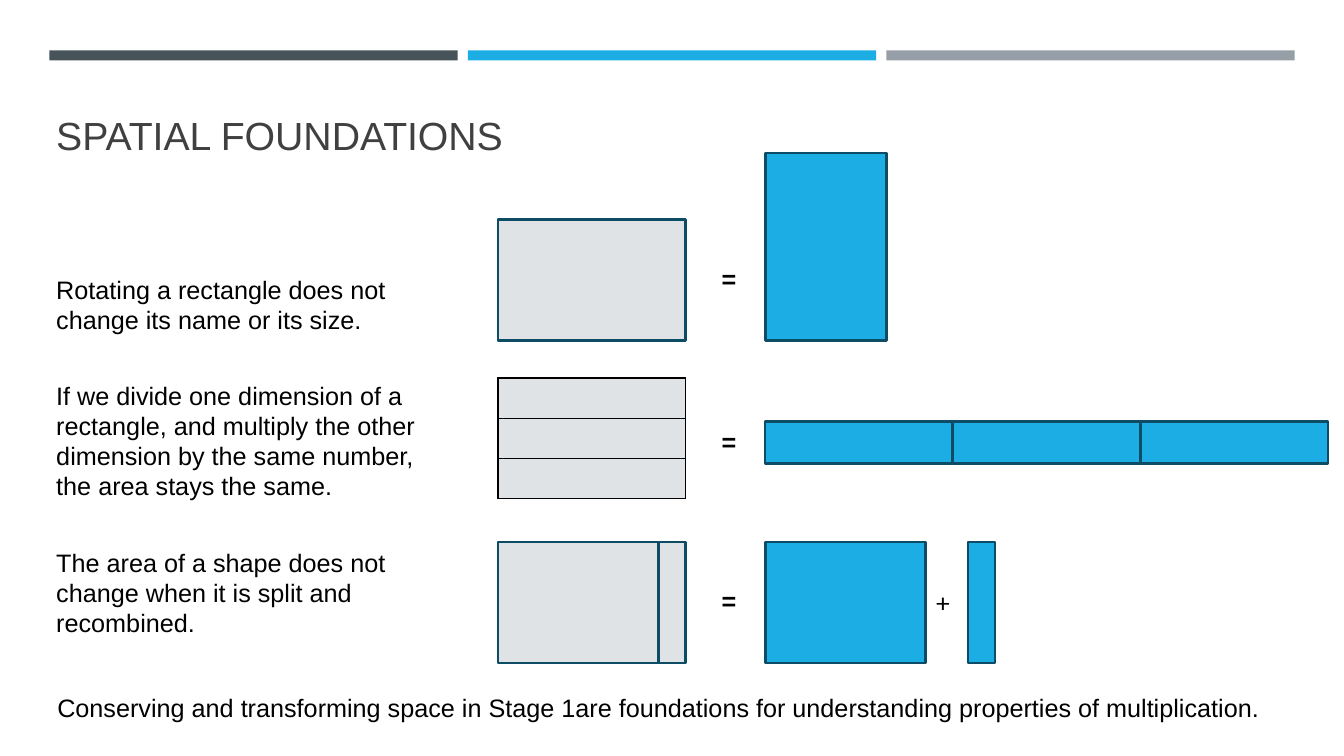
import pptx
import pptx.dml.color
import pptx.enum.shapes
import pptx.enum.text
import pptx.oxml
import pptx.oxml.ns
import pptx.util
from pptx.util import Inches

COLOURS = {
    "slate": "465359",
    "blue": "1CADE4",
    "grey": "969FA7",
    "pale": "DFE3E5",
    "outline": "0C4C64",
    "title": "404040",
    "black": "000000",
}

# Shared measures, in inches
TEXT_LEFT, TEXT_WIDTH = 0.46, 4.1
LEFT_COLUMN, RIGHT_COLUMN = 4.94, 7.59
LONG_SIDE, SHORT_SIDE = 1.86, 1.2
SPLIT_WIDE, SPLIT_NARROW = 1.59, 0.27
SPLIT_TOP = 5.38
STRIP_HEIGHT = 0.42
PARTS = 3


def colour(name):
    return pptx.dml.color.RGBColor.from_string(COLOURS[name])


def add_text(page, text, left, top, width, height, size=18, font="Arial",
             fill="black", bold=False, anchor="TOP", bottom=0.05):
    box = page.shapes.add_textbox(Inches(left), Inches(top), Inches(width), Inches(height))
    frame = box.text_frame
    frame.word_wrap = True
    frame.vertical_anchor = getattr(pptx.enum.text.MSO_ANCHOR, anchor)
    frame.margin_bottom = Inches(bottom)
    span = frame.paragraphs[0].add_run()
    span.text = text
    span.font.name = font
    span.font.size = pptx.util.Pt(size)
    span.font.bold = bold
    span.font.color.rgb = colour(fill)


def add_rectangle(page, left, top, width, height, fill, outlined=True, rotation=0):
    shape = page.shapes.add_shape(pptx.enum.shapes.MSO_SHAPE.RECTANGLE, Inches(left),
                                  Inches(top), Inches(width), Inches(height))
    shape.shadow.inherit = False
    shape.rotation = rotation
    shape.fill.solid()
    shape.fill.fore_color.rgb = colour(fill)
    if outlined:
        shape.line.color.rgb = colour("outline")
        shape.line.width = pptx.util.Pt(1.75)
    else:
        shape.line.fill.background()


def add_cell_borders(cell):
    properties = cell._tc.get_or_add_tcPr()
    for position, side in enumerate(("lnL", "lnR", "lnT", "lnB")):
        border = pptx.oxml.parse_xml(
            f'<a:{side} {pptx.oxml.ns.nsdecls("a")} w="12700"><a:solidFill>'
            f'<a:srgbClr val="{COLOURS["black"]}"/></a:solidFill></a:{side}>')
        properties.insert(position, border)


def add_divided_rectangle(page, left, top, width, height, rows):
    frame = page.shapes.add_table(rows, 1, Inches(left), Inches(top),
                                  Inches(width), Inches(height))
    table = frame.table
    table.first_row = table.horz_banding = False
    for row in table.rows:
        row.height = Inches(height / rows)
        cell = row.cells[0]
        cell.margin_top = cell.margin_bottom = 0
        cell.fill.solid()
        cell.fill.fore_color.rgb = colour("pale")
        add_cell_borders(cell)


def main():
    deck = pptx.Presentation()
    deck.slide_width, deck.slide_height = Inches(13.33), Inches(7.5)
    page = deck.slides.add_slide(deck.slide_layouts[6])

    # Header bars and title
    for index, fill in enumerate(("slate", "blue", "grey")):
        add_rectangle(page, 0.49 + 4.15 * index, 0.5, 4.05, 0.1, fill, outlined=False)
    add_text(page, "SPATIAL FOUNDATIONS", TEXT_LEFT, 0.77, 12.24, 1.3,
             size=28, fill="title", anchor="BOTTOM", bottom=0.5)

    # Statements
    for text, top, height in (
        ("Rotating a rectangle does not change its name or its size.", 2.67, 0.71),
        ("If we divide one dimension of a rectangle, and multiply the other "
         "dimension by the same number, the area stays the same.", 3.72, 1.31),
        ("The area of a shape does not change when it is split and recombined.",
         5.38, 1.01),
    ):
        add_text(page, text, TEXT_LEFT, top, TEXT_WIDTH, height)

    # Rotated rectangle
    add_rectangle(page, LEFT_COLUMN, 2.18, LONG_SIDE, SHORT_SIDE, "pale")
    add_rectangle(page, 7.26, 1.85, LONG_SIDE, SHORT_SIDE, "blue", rotation=90)

    # Rectangle divided into rows, laid end to end
    add_divided_rectangle(page, LEFT_COLUMN, 3.75, LONG_SIDE, SHORT_SIDE, PARTS)
    for index in range(PARTS):
        add_rectangle(page, RIGHT_COLUMN + LONG_SIDE * index, 4.18,
                      LONG_SIDE, STRIP_HEIGHT, "blue")

    # Rectangle split in two
    for left, width, fill in (
        (LEFT_COLUMN, SPLIT_WIDE, "pale"),
        (LEFT_COLUMN + SPLIT_WIDE, SPLIT_NARROW, "pale"),
        (RIGHT_COLUMN, SPLIT_WIDE, "blue"),
        (9.6, SPLIT_NARROW, "blue"),
    ):
        add_rectangle(page, left, SPLIT_TOP, width, SHORT_SIDE, fill)

    # Operators
    add_text(page, "+", 9.19, 5.76, 0.27, 0.4, font="Karla")
    for top in (2.56, 4.18, 5.76):
        add_text(page, "=", 7.06, top, 0.4, 0.4, bold=True)

    # Conclusion
    add_text(page, "Conserving and transforming space in Stage 1are foundations for "
             "understanding properties of multiplication.", 0.47, 6.82, 12.86, 0.4)

    deck.save("out.pptx")


if __name__ == "__main__":
    main()
